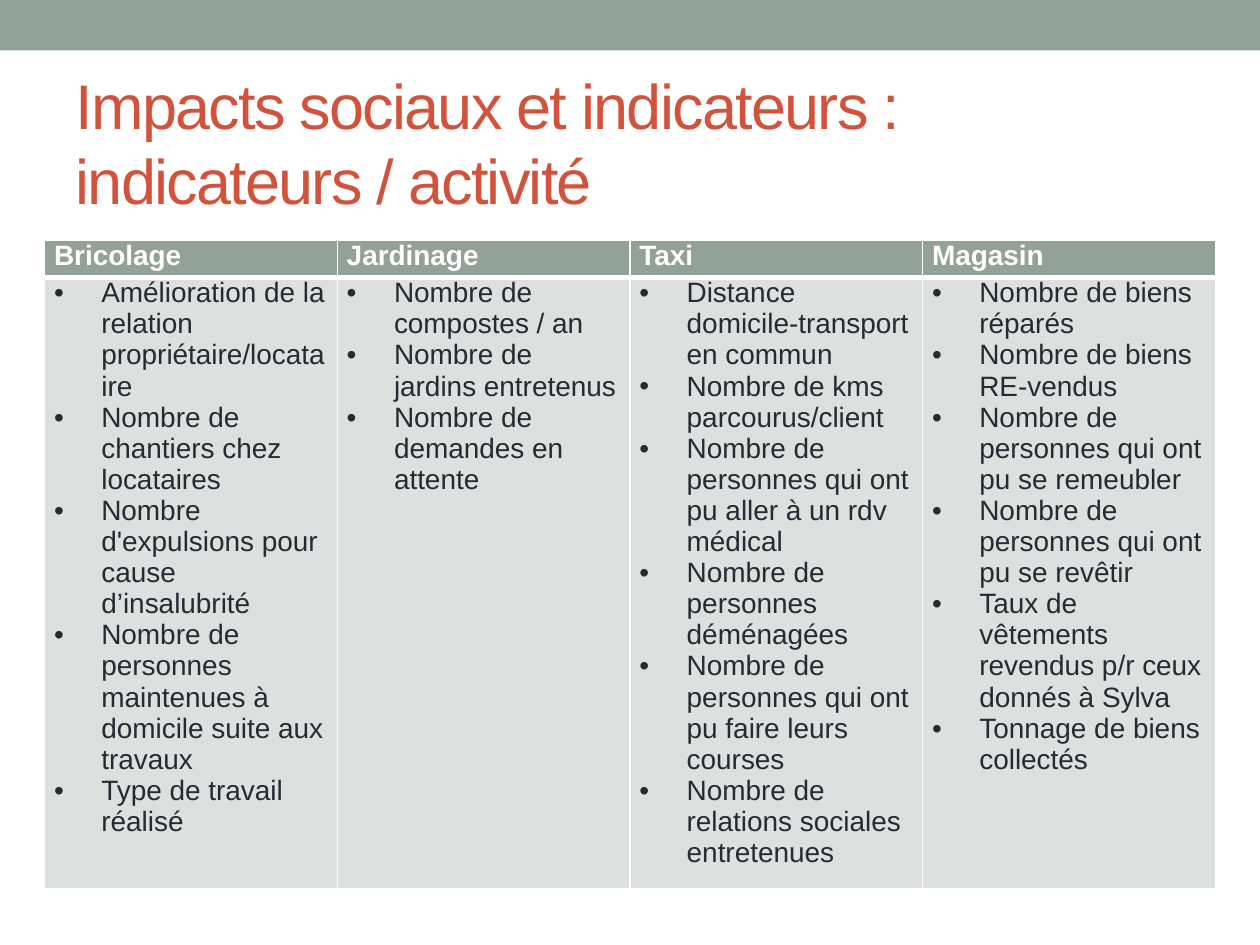
from dataclasses import dataclass
from lxml.etree import SubElement as Sub
from pptx import Presentation
from pptx.dml.color import RGBColor as Rgb
from pptx.enum.shapes import MSO_SHAPE as Kind
from pptx.enum.text import MSO_ANCHOR as Anchor, MSO_AUTO_SIZE as Auto, PP_ALIGN as Align
from pptx.oxml.ns import qn
from pptx.util import Pt


@dataclass
class Theme:
    face: str = "Arial"
    sage: str = "93A299"
    rust: str = "D2533C"
    ink: str = "292934"
    pale: str = "DCE0DE"
    white: str = "FFFFFF"
    head: int = 36
    text: int = 16


def put(item, **vals):
    for key, val in vals.items():
        setattr(item, key, val)


def paint(fill, tint):
    fill.solid()
    fill.fore_color.rgb = Rgb.from_string(tint)


class Deck:
    def __init__(self, theme, wide, high):
        self.theme = theme
        self.file = Presentation()
        put(self.file, slide_width=Pt(wide), slide_height=Pt(high))
        self.slide = self.file.slides.add_slide(self.file.slide_layouts[5])

    def style(self, font, size, tint, bold=False):
        put(font, name=self.theme.face, size=Pt(size), bold=bold)
        font.color.rgb = Rgb.from_string(tint)

    def band(self, wide, high):
        bar = self.slide.shapes.add_shape(Kind.RECTANGLE, 0, 0, Pt(wide), Pt(high))
        bar.shadow.inherit = False
        paint(bar.fill, self.theme.sage)
        bar.line.fill.background()

    def title(self, text, left, top, wide, high):
        box = self.slide.shapes.title
        put(box, left=Pt(left), top=Pt(top), width=Pt(wide), height=Pt(high))
        frame = box.text_frame
        put(frame, text=text, word_wrap=True, auto_size=Auto.NONE,
            vertical_anchor=Anchor.MIDDLE)
        para = frame.paragraphs[0]
        para.alignment = Align.LEFT
        for run in para.runs:
            self.style(run.font, self.theme.head, self.theme.rust)
            run.font._element.set("spc", "-100")

    def edges(self, cell, **sizes):
        prop = cell._tc.get_or_add_tcPr()
        for side in "LRTB":
            line = Sub(prop, qn(f"a:ln{side}"), w=str(Pt(sizes.get(side, 1))))
            fill = Sub(line, qn("a:solidFill"))
            Sub(fill, qn("a:srgbClr"), val=self.theme.white)

    def bullet(self, para):
        prop = para._p.get_or_add_pPr()
        dent = Pt(27)
        prop.set("marL", str(dent))
        prop.set("indent", str(-dent))
        Sub(prop, qn("a:buFont"), typeface=self.theme.face)
        Sub(prop, qn("a:buChar"), char="•")

    def cell(self, cell, lines, head):
        look = self.theme
        put(cell, margin_left=Pt(5.4), margin_right=Pt(5.4), margin_top=0,
            margin_bottom=0, vertical_anchor=Anchor.TOP)
        self.edges(cell, **{"B" if head else "T": 3})
        paint(cell.fill, look.sage if head else look.pale)
        frame = cell.text_frame
        frame.text = "\n".join(lines)
        for para in frame.paragraphs:
            if not head:
                self.bullet(para)
            self.style(para.runs[0].font, look.text,
                       look.white if head else look.ink, head)

    def table(self, data, left, top, wide, highs):
        grid = self.slide.shapes.add_table(
            len(highs), len(data), Pt(left), Pt(top), Pt(wide), Pt(sum(highs))).table
        for row, high in zip(grid.rows, highs):
            row.height = Pt(high)
        for col, (name, items) in enumerate(data.items()):
            grid.columns[col].width = Pt(wide / len(data))
            self.cell(grid.cell(0, col), [name], True)
            self.cell(grid.cell(1, col), items, False)


DATA = {
    "Bricolage": [
        "Amélioration de la relation propriétaire/locataire",
        "Nombre de chantiers chez locataires",
        "Nombre d'expulsions pour cause d’insalubrité",
        "Nombre de personnes maintenues à domicile suite aux travaux",
        "Type de travail réalisé",
    ],
    "Jardinage": [
        "Nombre de compostes / an",
        "Nombre de jardins entretenus",
        "Nombre de demandes en attente",
    ],
    "Taxi": [
        "Distance domicile-transport en commun",
        "Nombre de kms parcourus/client",
        "Nombre de personnes qui ont pu aller à un rdv médical",
        "Nombre de personnes déménagées",
        "Nombre de personnes qui ont pu faire leurs courses",
        "Nombre de relations sociales entretenues",
    ],
    "Magasin": [
        "Nombre de biens réparés",
        "Nombre de biens RE-vendus",
        "Nombre de personnes qui ont pu se remeubler",
        "Nombre de personnes qui ont pu se revêtir",
        "Taux de vêtements revendus p/r ceux donnés à Sylva",
        "Tonnage de biens collectés",
    ],
}


def main():
    deck = Deck(Theme(), 720, 540)
    deck.band(720, 28.8)
    deck.title("Impacts sociaux et indicateurs :\vindicateurs / activité",
               36, 42, 648, 78)
    deck.table(DATA, 25.5, 137.3, 669, [21.3, 349])
    deck.file.save("out.pptx")


if __name__ == "__main__":
    main()
